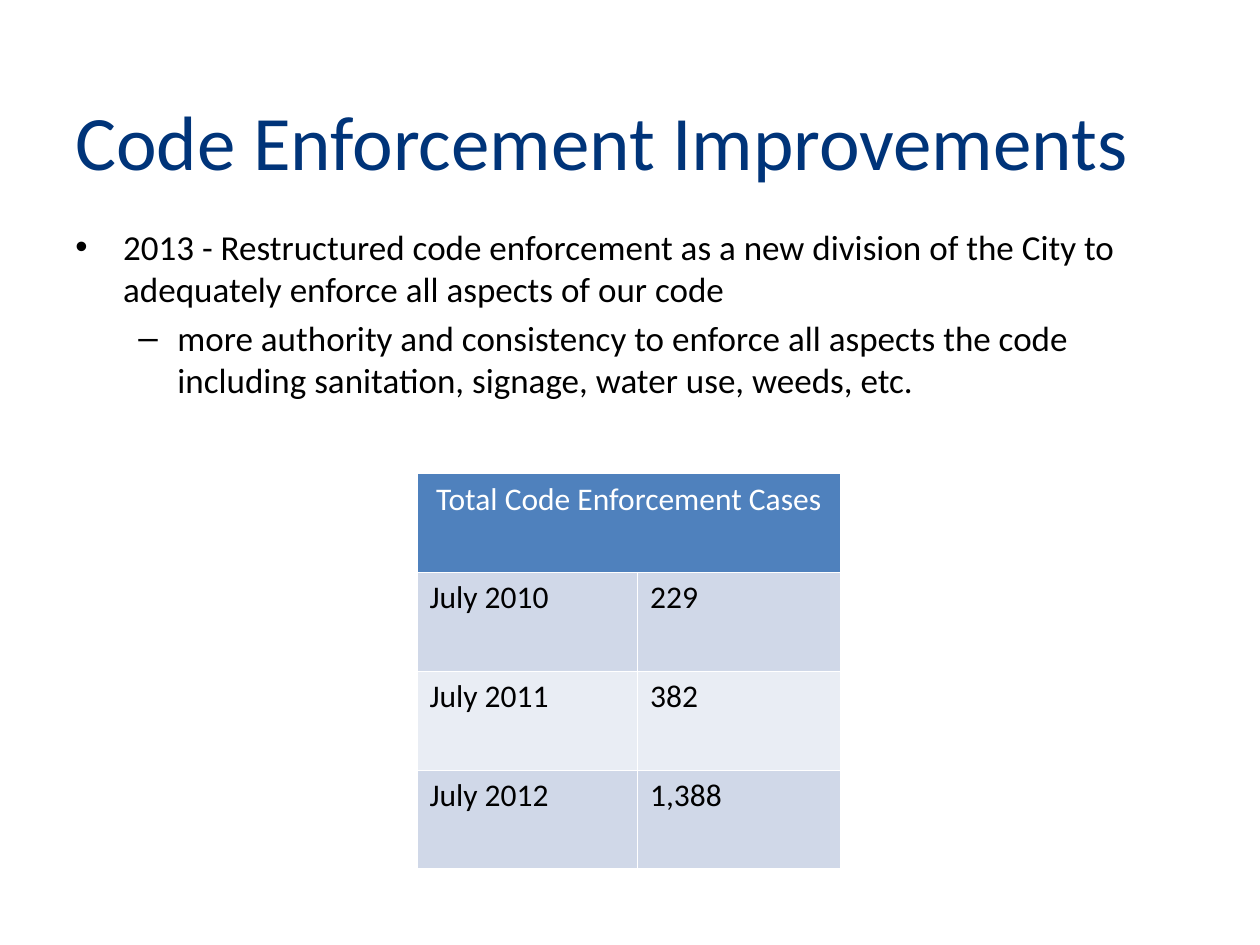
from lxml.etree import SubElement
from pptx import Presentation
from pptx.dml.color import RGBColor
from pptx.enum.text import MSO_ANCHOR, PP_ALIGN
from pptx.oxml.ns import qn
from pptx.util import Inches, Pt


def color(hex_value):
    return RGBColor.from_string(hex_value)


def write_text(paragraph, text, size, text_color, font="Calibri",
               align=PP_ALIGN.LEFT, space_before=0):
    paragraph.alignment = align
    paragraph.space_before = Pt(space_before)
    run = paragraph.add_run()
    run.text = text
    run.font.name = font
    run.font.size = Pt(size)
    run.font.color.rgb = color(text_color)


class SlideBuilder:
    NAVY, BLACK, WHITE = "003479", "000000", "FFFFFF"
    HEADER, BANDS = "4F81BD", ("D0D8E8", "E9EDF4")

    def __init__(self, presentation):
        self.slide = presentation.slides.add_slide(presentation.slide_layouts[6])
        self.slide.background.fill.solid()
        self.slide.background.fill.fore_color.rgb = color(self.WHITE)

    def text_frame(self, left, top, width, height, anchor=MSO_ANCHOR.TOP):
        box = self.slide.shapes.add_textbox(
            Inches(left), Inches(top), Inches(width), Inches(height))
        box.text_frame.word_wrap = True
        box.text_frame.vertical_anchor = anchor
        return box.text_frame

    def title(self, text, *position):
        frame = self.text_frame(*position, anchor=MSO_ANCHOR.MIDDLE)
        write_text(frame.paragraphs[0], text, 44, self.NAVY)

    def bullets(self, items, *position):
        frame = self.text_frame(*position)
        for index, (level, bullet, margin, hanging, text) in enumerate(items):
            paragraph = frame.add_paragraph() if index else frame.paragraphs[0]
            paragraph.level = level
            properties = paragraph._p.get_or_add_pPr()
            properties.set("marL", str(Inches(margin)))
            properties.set("indent", str(-Inches(hanging)))
            SubElement(properties, qn("a:buFont"), typeface="Arial")
            SubElement(properties, qn("a:buChar"), char=bullet)
            write_text(paragraph, text, 20, self.BLACK,
                       space_before=4 if index else 0)

    def cell_style(self, cell, fill):
        properties = cell._tc.get_or_add_tcPr()
        for side in ("lnL", "lnR", "lnT", "lnB"):
            line = SubElement(properties, qn(f"a:{side}"), w=str(Pt(1)))
            line_fill = SubElement(line, qn("a:solidFill"))
            SubElement(line_fill, qn("a:srgbClr"), val=self.WHITE)
        cell.fill.solid()
        cell.fill.fore_color.rgb = color(fill)

    def table(self, heading, rows, left, top, column_widths, height):
        row_count = len(rows) + 1
        table = self.slide.shapes.add_table(
            row_count, len(column_widths), Inches(left), Inches(top),
            Inches(sum(column_widths)), Inches(height)).table
        for column, width in zip(table.columns, column_widths):
            column.width = Inches(width)
        for row in table.rows:
            row.height = Inches(height / row_count)

        # Heading across all columns
        for cell in table.rows[0].cells:
            self.cell_style(cell, self.HEADER)
        table.cell(0, 0).merge(table.cell(0, len(column_widths) - 1))
        write_text(table.cell(0, 0).text_frame.paragraphs[0], heading, 18,
                   self.WHITE, align=PP_ALIGN.CENTER)

        # Banded data rows
        for row_index, values in enumerate(rows):
            for column_index, value in enumerate(values):
                cell = table.cell(row_index + 1, column_index)
                self.cell_style(cell, self.BANDS[row_index % 2])
                write_text(cell.text_frame.paragraphs[0], value, 18, self.BLACK)


def main():
    presentation = Presentation()
    presentation.slide_width = Inches(10)
    presentation.slide_height = Inches(7.5)
    builder = SlideBuilder(presentation)

    # Title and bullets
    builder.title("Code Enforcement Improvements", 0.5, 0.6, 9, 1.02)
    builder.bullets([
        (0, "•", 0.38, 0.38,
         "2013 - Restructured code enforcement as a new division of the City "
         "to adequately enforce all aspects of our code"),
        (1, "–", 0.81, 0.31,
         "more authority and consistency to enforce all aspects the code "
         "including sanitation, signage, water use, weeds, etc."),
    ], 0.5, 1.74, 8.67, 3.6)

    # Case totals
    builder.table(
        "Total Code Enforcement Cases",
        [("July 2010", "229"), ("July 2011", "382"), ("July 2012", "1,388")],
        3.31, 3.76, (1.75, 1.61), 3.14)

    presentation.save("out.pptx")


if __name__ == "__main__":
    main()
